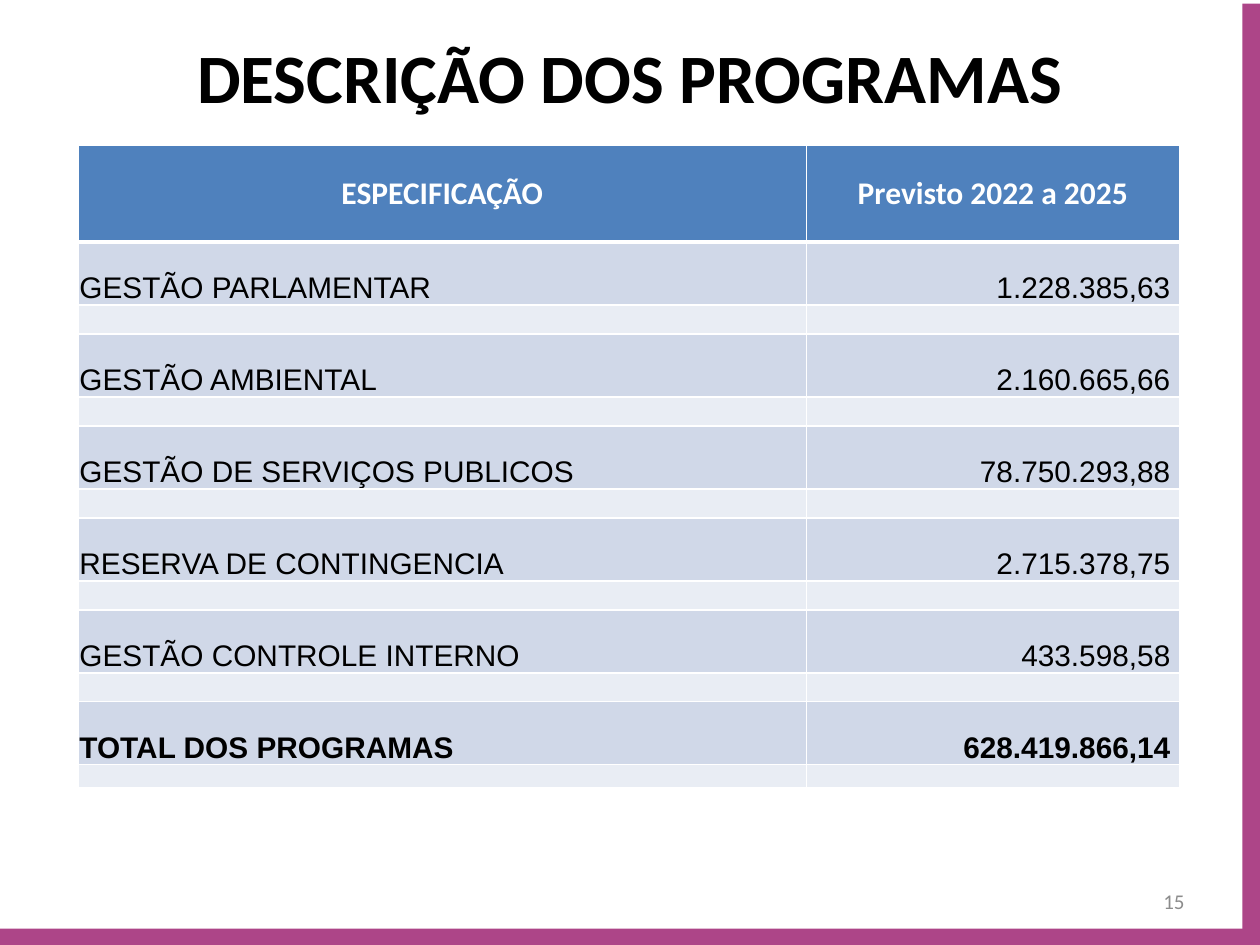
from lxml import etree
from pptx import Presentation
from pptx import util as u
from pptx.dml.color import RGBColor
from pptx.enum import shapes, text
from pptx.oxml.ns import qn

COLORS = {
    "accent": "AD4588",
    "header": "4F81BD",
    "band": "D0D8E8",
    "gap": "E9EDF4",
    "white": "FFFFFF",
    "black": "000000",
    "number": "8C8C8C",
}
PROGRAMS = [
    ("GESTÃO PARLAMENTAR", "1.228.385,63"),
    ("GESTÃO AMBIENTAL", "2.160.665,66"),
    ("GESTÃO DE SERVIÇOS PUBLICOS", "78.750.293,88"),
    ("RESERVA DE CONTINGENCIA", "2.715.378,75"),
    ("GESTÃO CONTROLE INTERNO", "433.598,58"),
    ("TOTAL DOS PROGRAMAS", "628.419.866,14"),
]
HEADERS = ("ESPECIFICAÇÃO", "Previsto 2022 a 2025")
COL_WIDTHS = (5.78, 2.96)
HEADER_H, PROGRAM_H, GAP_H, LAST_GAP_H = 0.77, 0.5, 0.23, 0.18
ALIGN = text.PP_ALIGN
ANCHOR = text.MSO_ANCHOR


def rgb(name):
    return RGBColor.from_string(COLORS[name])


def write(tf, content, size, font, color, align, bold=False):
    p = tf.paragraphs[0]
    p.text = content
    p.alignment = align
    r = p.runs[0]
    r.font.size = u.Pt(size)
    r.font.name = font
    r.font.bold = bold
    r.font.color.rgb = rgb(color)


def add_label(s, box, content, size, color, align, bold=False):
    tf = s.shapes.add_textbox(*map(u.Inches, box)).text_frame
    tf.word_wrap = True
    tf.vertical_anchor = ANCHOR.MIDDLE
    write(tf, content, size, "Calibri", color, align, bold)


def add_bar(s, box):
    sp = s.shapes.add_shape(shapes.MSO_SHAPE.RECTANGLE, *map(u.Inches, box))
    sp.shadow.inherit = False
    sp.fill.solid()
    sp.fill.fore_color.rgb = rgb("accent")
    sp.line.fill.background()


def set_borders(cell, widths):
    tc_pr = cell._tc.get_or_add_tcPr()
    for side, width in widths.items():
        ln = etree.SubElement(tc_pr, qn(f"a:ln{side}"), w=str(u.Pt(width)))
        fill = etree.SubElement(ln, qn("a:solidFill"))
        etree.SubElement(fill, qn("a:srgbClr"), val=COLORS["white"])


def style_cell(cell, fill, anchor, top=1, bottom=1):
    set_borders(cell, {"L": 1, "R": 1, "T": top, "B": bottom})
    cell.fill.solid()
    cell.fill.fore_color.rgb = rgb(fill)
    cell.vertical_anchor = anchor


def set_margins(cell, left=0, right=0, top=0):
    cell.margin_left = u.Inches(left)
    cell.margin_right = u.Inches(right)
    cell.margin_top = u.Inches(top)
    cell.margin_bottom = 0


def fill_header(table):
    for col, label in enumerate(HEADERS):
        cell = table.cell(0, col)
        style_cell(cell, "header", ANCHOR.MIDDLE, bottom=3)
        write(cell.text_frame, label, 18, "Calibri", "white", ALIGN.CENTER, True)


def fill_program(table, row, name, amount):
    bold = name.startswith("TOTAL")
    top = 3 if row == 1 else 1
    left, right = table.cell(row, 0), table.cell(row, 1)
    set_margins(left, 0.01, 0.01, 0.01)
    set_margins(right, right=0.07)
    for cell, content, align in ((left, name, ALIGN.LEFT),
                                 (right, amount, ALIGN.RIGHT)):
        style_cell(cell, "band", ANCHOR.BOTTOM, top=top)
        write(cell.text_frame, content, 17, "Arial", "black", align, bold)


def fill_gap(table, row):
    for col in range(len(HEADERS)):
        cell = table.cell(row, col)
        set_margins(cell)
        style_cell(cell, "gap", ANCHOR.BOTTOM)
        p = cell.text_frame.paragraphs[0]
        etree.SubElement(p._p, qn("a:endParaRPr"), sz="800")


def add_program_table(s):
    heights = [HEADER_H] + [PROGRAM_H, GAP_H] * len(PROGRAMS)
    heights[-1] = LAST_GAP_H
    box = (0.62, 1.15, sum(COL_WIDTHS), sum(heights))
    table = s.shapes.add_table(len(heights), len(HEADERS),
                               *map(u.Inches, box)).table
    for column, width in zip(table.columns, COL_WIDTHS):
        column.width = u.Inches(width)
    for row, height in zip(table.rows, heights):
        row.height = u.Inches(height)
    fill_header(table)
    for i, (name, amount) in enumerate(PROGRAMS):
        fill_program(table, 2 * i + 1, name, amount)
        fill_gap(table, 2 * i + 2)


def main():
    prs = Presentation()
    prs.slide_width = u.Inches(10)
    prs.slide_height = u.Inches(7.5)
    s = prs.slides.add_slide(prs.slide_layouts[6])
    add_label(s, (0.5, 0.25, 9, 0.7), "DESCRIÇÃO DOS PROGRAMAS", 39.6,
              "black", ALIGN.CENTER, True)
    add_program_table(s)
    add_label(s, (7.17, 6.95, 2.33, 0.4), "15", 12, "number", ALIGN.RIGHT)
    add_bar(s, (0, 7.37, 10, 0.13))
    add_bar(s, (9.86, 0.03, 0.14, 7.47))
    prs.save("out.pptx")


if __name__ == "__main__":
    main()
